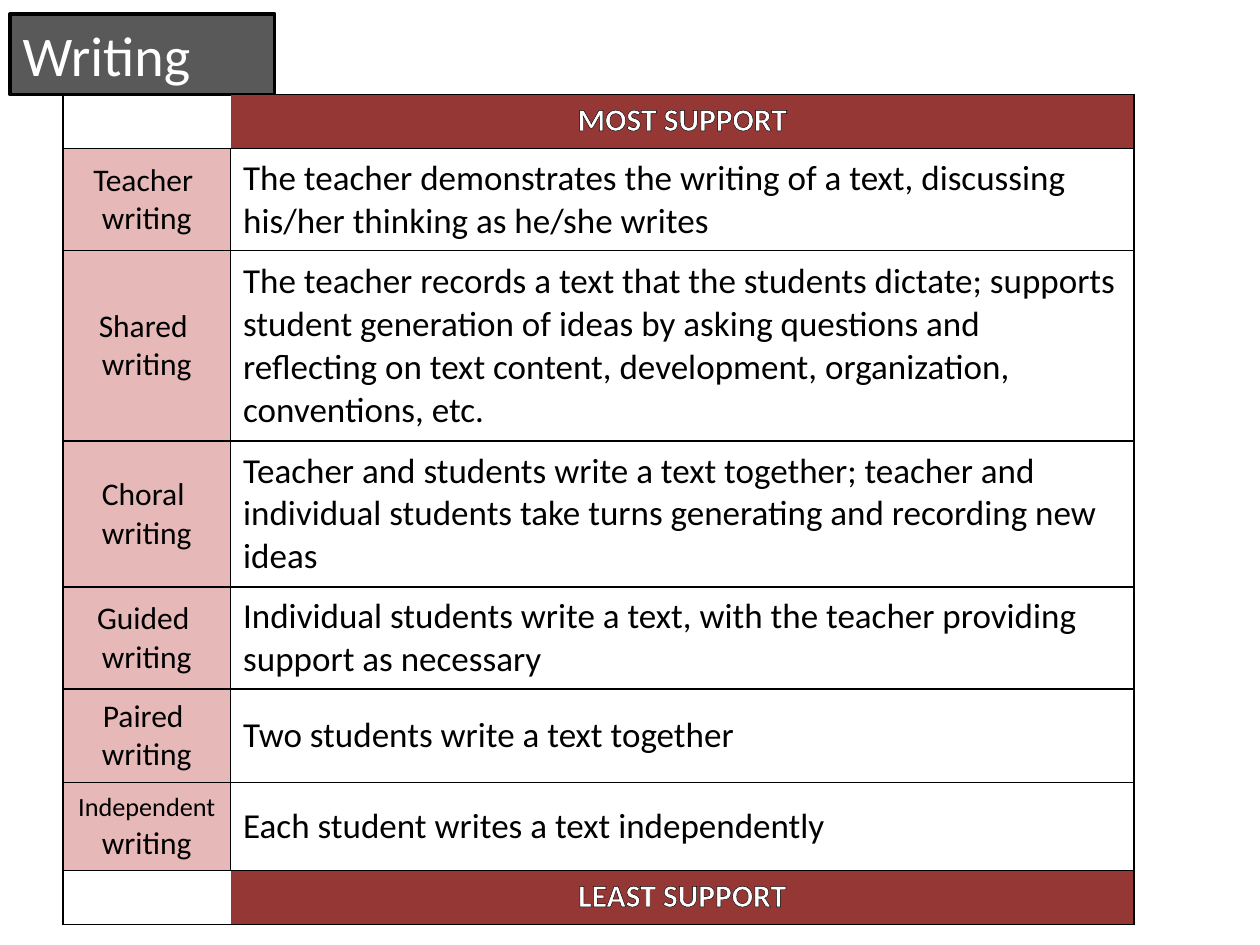
from lxml import etree
from pptx import Presentation
from pptx import util as u
from pptx.dml.color import RGBColor
from pptx.enum import text
from pptx.oxml.ns import qn

COLORS = {"ink": "000000", "paper": "FFFFFF", "band": "953735",
          "label": "E6B9B8", "title": "595959"}
FONT = "Calibri"
COLS = [1.33, 7.17]
ROWS = [0.43, 0.81, 1.51, 1.16, 0.81, 0.74, 0.7, 0.43]

# Label paragraphs as (text, size) runs, description, space after
STAGES = [
    ([[("Teacher ", 18)], [("writing", 18)]],
     "The teacher demonstrates the writing of a text, discussing his/her "
     "thinking as he/she writes", 6),
    ([[("Shared ", 18)], [("writing", 18)]],
     "The teacher records a text that the students dictate; supports student "
     "generation of ideas by asking questions and reflecting on text content, "
     "development, organization, conventions, etc.", 6),
    ([[("Choral ", 18)], [("writing", 18)]],
     "Teacher and students write a text together; teacher and individual "
     "students take turns generating and recording new ideas", 6),
    ([[("Guided ", 18)], [("writing", 18)]],
     "Individual students write a text, with the teacher providing support "
     "as necessary", 6),
    ([[("Paired ", 18)], [("writing", 18)]],
     "Two students write a text together", 0),
    ([[("Independent", 15), (" ", 16), ("writing", 18)]],
     "Each student writes a text independently", 0),
]


def rgb(name):
    return RGBColor.from_string(COLORS[name])


def add_line(parent, tag, index, width, visible=True):
    ln = etree.Element(qn(tag), w=str(u.Pt(width)))
    if visible:
        fill = etree.SubElement(ln, qn("a:solidFill"))
        etree.SubElement(fill, qn("a:srgbClr"), val=COLORS["ink"])
    else:
        etree.SubElement(ln, qn("a:noFill"))
    parent.insert(index, ln)


def add_run(p, words, size, color="ink", bold=False):
    r = p.add_run()
    r.text = words
    r.font.name, r.font.size, r.font.bold = FONT, u.Pt(size), bold
    r.font.color.rgb = rgb(color)
    return r


def style_cell(cell, fill=None, open_side=None):
    cell.vertical_anchor = text.MSO_ANCHOR.MIDDLE
    if fill:
        cell.fill.solid()
        cell.fill.fore_color.rgb = rgb(fill)
    else:
        cell.fill.background()
    tc_pr = cell._tc.get_or_add_tcPr()
    for i, side in enumerate("LRTB"):
        add_line(tc_pr, f"a:ln{side}", i, 1, side != open_side)


def fill_cell(cell, paragraphs, align, after=0):
    tf = cell.text_frame
    for i, runs in enumerate(paragraphs):
        p = tf.add_paragraph() if i else tf.paragraphs[0]
        p.alignment = align
        p.space_after = u.Pt(after)
        for words, size in runs:
            add_run(p, words, size)


def support_row(row, words):
    blank, band = row.cells
    style_cell(blank, open_side="R")
    style_cell(band, "band", open_side="L")
    band.vertical_anchor = text.MSO_ANCHOR.TOP
    p = band.text_frame.paragraphs[0]
    p.alignment = text.PP_ALIGN.CENTER
    r = add_run(p, words, 18, "paper", True)
    add_line(r.font._element, "a:ln", 0, 0.75)


def stage_row(row, label, description, after):
    name, detail = row.cells
    style_cell(name, "label")
    style_cell(detail)
    fill_cell(name, label, text.PP_ALIGN.CENTER)
    fill_cell(detail, [[(description, 20)]], text.PP_ALIGN.LEFT, after)


def support_table(s, left, top):
    box = [u.Inches(v) for v in (left, top, sum(COLS), sum(ROWS))]
    table = s.shapes.add_table(len(ROWS), len(COLS), *box).table
    table.first_row = table.horz_banding = False
    for col, width in zip(table.columns, COLS):
        col.width = u.Inches(width)
    for row, height in zip(table.rows, ROWS):
        row.height = u.Inches(height)
    rows = list(table.rows)
    support_row(rows[0], "MOST SUPPORT")
    for row, stage in zip(rows[1:-1], STAGES):
        stage_row(row, *stage)
    support_row(rows[-1], "LEAST SUPPORT")


def title_box(s, left, top, width, height):
    sp = s.shapes.title
    sp.left, sp.top, sp.width, sp.height = map(
        u.Inches, (left, top, width, height))
    sp.fill.solid()
    sp.fill.fore_color.rgb = rgb("title")
    sp.line.color.rgb = rgb("ink")
    sp.line.width = u.Pt(2)
    tf = sp.text_frame
    tf.word_wrap = True
    tf.auto_size = text.MSO_AUTO_SIZE.NONE
    tf.vertical_anchor = text.MSO_ANCHOR.TOP
    p = tf.paragraphs[0]
    p.alignment = text.PP_ALIGN.LEFT
    add_run(p, "Writing", 32, "paper")


def main():
    prs = Presentation()
    prs.slide_width, prs.slide_height = u.Inches(10), u.Inches(7.5)
    s = prs.slides.add_slide(prs.slide_layouts[5])
    support_table(s, 0.5, 0.75)
    title_box(s, 0.08, 0.11, 2.1, 0.64)
    prs.save("out.pptx")


if __name__ == "__main__":
    main()
